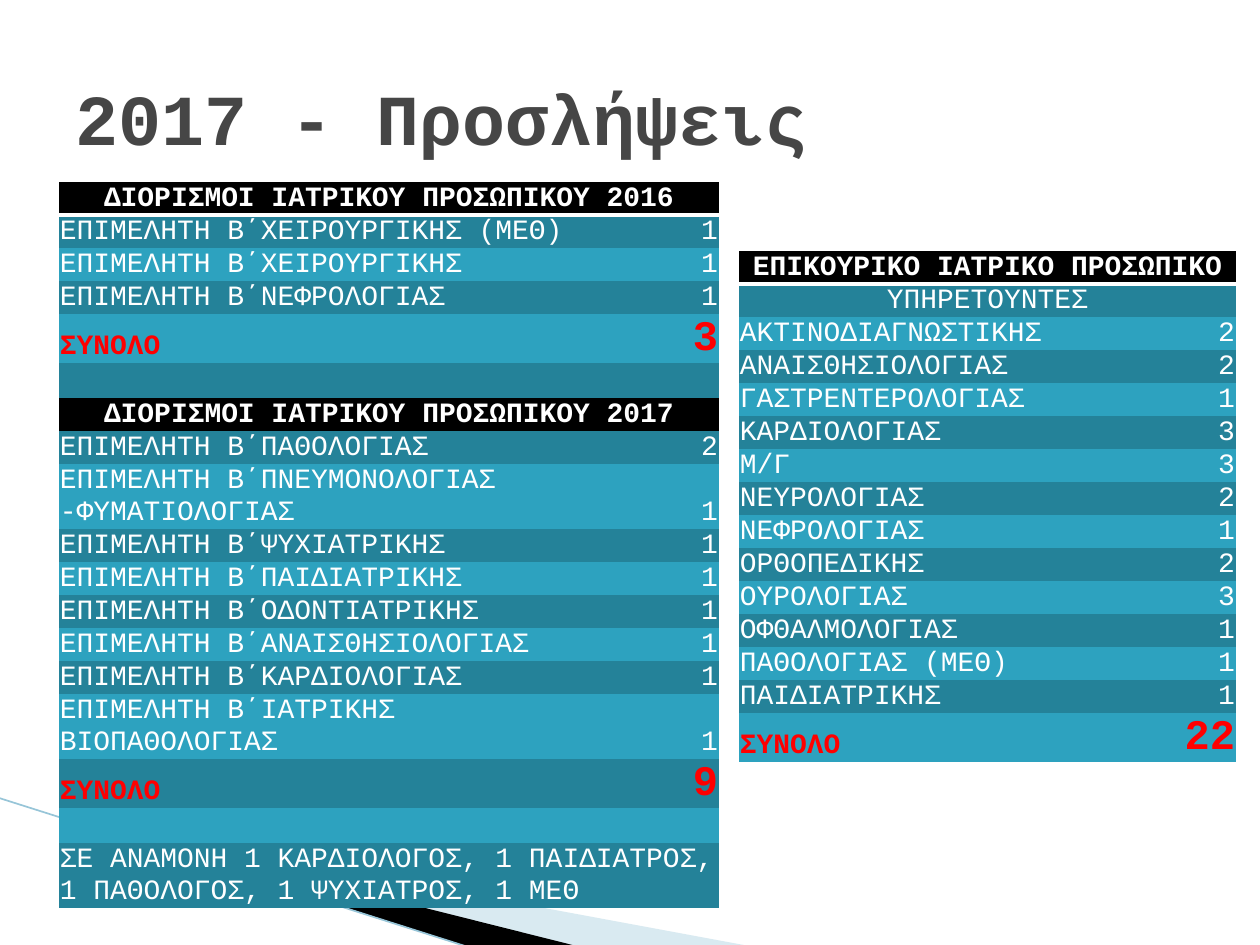
from dataclasses import dataclass

from lxml import etree
from pptx import Presentation
from pptx import util as u
from pptx.dml.color import RGBColor
from pptx.enum import shapes, text
from pptx.oxml import ns

SCALE = 914400 // 126  # EMU in one px


def px(length):
    return u.Emu(length * SCALE)


@dataclass(frozen=True)
class Theme:
    font: str = "Courier New"
    heading: str = "464646"
    white: str = "FFFFFF"
    black: str = "000000"
    total: str = "FF0000"
    dark_band: str = "248299"
    light_band: str = "2DA2BF"
    wedge: str = "A0CBDC"
    edge: str = "97C5D8"
    title_size: int = 41
    table_size: int = 16
    total_size: int = 24


# Row kinds: height in px, and whether both columns are joined
HEIGHTS = {"header": 33, "sub": 33, "item": 33, "wrapped": 65,
           "total": 49, "gap": 35, "blank": 35, "note": 65}
JOINED = {"header", "sub", "gap", "note"}
CENTRED = {"header", "sub"}


class Deck:
    def __init__(self, theme):
        self.theme = theme
        self.prs = Presentation()
        self.prs.slide_width, self.prs.slide_height = u.Inches(10), u.Inches(7.5)
        self.slide = self.prs.slides.add_slide(self.prs.slide_layouts[5])

    def style(self, font, color, size, bold):
        look = {"name": self.theme.font, "size": u.Pt(size), "bold": bold}
        for key, value in look.items():
            setattr(font, key, value)
        font.color.rgb = RGBColor.from_string(color)

    def title(self, words, left, top, width, height):
        heading = self.slide.shapes.title
        box = {"left": left, "top": top, "width": width, "height": height}
        for key, value in box.items():
            setattr(heading, key, px(value))
        frame = heading.text_frame
        frame.text = words
        layout = {"vertical_anchor": text.MSO_ANCHOR.MIDDLE, "word_wrap": True,
                  "auto_size": text.MSO_AUTO_SIZE.NONE}
        for key, value in layout.items():
            setattr(frame, key, value)
        line = frame.paragraphs[0]
        line.alignment = text.PP_ALIGN.LEFT
        self.style(line.runs[0].font, self.theme.heading, self.theme.title_size, True)

    def wedge(self, points, color, opacity=100):
        builder = self.slide.shapes.build_freeform(*points[0], scale=SCALE)
        builder.add_line_segments(points[1:], close=True)
        wedge = builder.convert_to_shape()
        wedge.shadow.inherit = False
        wedge.line.fill.background()
        wedge.fill.solid()
        wedge.fill.fore_color.rgb = RGBColor.from_string(color)
        if opacity < 100:
            tint = wedge.fill._xPr.find(".//" + ns.qn("a:srgbClr"))
            etree.SubElement(tint, ns.qn("a:alpha"), val=str(opacity * 1000))

    def line(self, start, end, color, weight):
        edge = self.slide.shapes.add_connector(
            shapes.MSO_CONNECTOR.STRAIGHT, *map(px, start + end))
        edge.line.color.rgb = RGBColor.from_string(color)
        edge.line.width = u.Pt(weight)
        etree.SubElement(edge._element.spPr, ns.qn("a:effectLst"))

    def underline(self, cell, color, weight):
        props = cell._tc.get_or_add_tcPr()
        border = etree.Element(ns.qn("a:lnB"), w=str(u.Pt(weight)))
        fill = etree.SubElement(border, ns.qn("a:solidFill"))
        etree.SubElement(fill, ns.qn("a:srgbClr"), val=color)
        props.insert(0, border)

    def cell(self, cell, words, kind, column, fill):
        theme = self.theme
        layout = {"vertical_anchor": text.MSO_ANCHOR.BOTTOM, "margin_left": px(1),
                  "margin_right": px(1), "margin_top": px(1), "margin_bottom": 0}
        for key, value in layout.items():
            setattr(cell, key, value)
        cell.fill.solid()
        cell.fill.fore_color.rgb = RGBColor.from_string(fill)
        line = cell.text_frame.paragraphs[0]
        if kind in CENTRED:
            line.alignment = text.PP_ALIGN.CENTER
        elif column == 1:
            line.alignment = text.PP_ALIGN.RIGHT
        is_total = kind == "total"
        size = theme.total_size if is_total and column == 1 else theme.table_size
        font = line.font
        if words:
            run = line.add_run()
            run.text = words
            font = run.font
        self.style(font, theme.total if is_total else theme.white, size,
                   is_total or kind == "header")

    def table(self, left, top, widths, rows):
        theme = self.theme
        heights = [HEIGHTS[kind] for kind, *_ in rows]
        grid = self.slide.shapes.add_table(
            len(rows), len(widths), px(left), px(top),
            px(sum(widths)), px(sum(heights))).table
        # Plain style without grid lines
        grid._tbl.tblPr.find(ns.qn("a:tableStyleId")).text = \
            "{2D5ABB26-0587-4C30-8999-92F81FD0307C}"
        for column, width in zip(grid.columns, widths):
            column.width = px(width)
        for index, (kind, *words) in enumerate(rows):
            grid.rows[index].height = px(heights[index])
            band = theme.dark_band if index % 2 else theme.light_band
            fill = theme.black if kind == "header" else band
            if kind in JOINED:
                grid.cell(index, 0).merge(grid.cell(index, 1))
            for column in range(len(widths)):
                value = words[column] if column < len(words) else ""
                self.cell(grid.cell(index, column), value, kind, column, fill)
                if index == 0:
                    self.underline(grid.cell(index, column), theme.white, 2)


APPOINTMENTS = [
    ("header", "ΔΙΟΡΙΣΜΟΙ ΙΑΤΡΙΚΟΥ ΠΡΟΣΩΠΙΚΟΥ 2016"),
    ("item", "ΕΠΙΜΕΛΗΤΗ Β΄ΧΕΙΡΟΥΡΓΙΚΗΣ (ΜΕΘ)", "1"),
    ("item", "ΕΠΙΜΕΛΗΤΗ Β΄ΧΕΙΡΟΥΡΓΙΚΗΣ", "1"),
    ("item", "ΕΠΙΜΕΛΗΤΗ Β΄ΝΕΦΡΟΛΟΓΙΑΣ", "1"),
    ("total", "ΣΥΝΟΛΟ", "3"),
    ("gap",),
    ("header", "ΔΙΟΡΙΣΜΟΙ ΙΑΤΡΙΚΟΥ ΠΡΟΣΩΠΙΚΟΥ 2017"),
    ("item", "ΕΠΙΜΕΛΗΤΗ Β΄ΠΑΘΟΛΟΓΙΑΣ", "2"),
    ("wrapped", "ΕΠΙΜΕΛΗΤΗ Β΄ΠΝΕΥΜΟΝΟΛΟΓΙΑΣ -ΦΥΜΑΤΙΟΛΟΓΙΑΣ", "1"),
    ("item", "ΕΠΙΜΕΛΗΤΗ Β΄ΨΥΧΙΑΤΡΙΚΗΣ", "1"),
    ("item", "ΕΠΙΜΕΛΗΤΗ Β΄ΠΑΙΔΙΑΤΡΙΚΗΣ", "1"),
    ("item", "ΕΠΙΜΕΛΗΤΗ Β΄ΟΔΟΝΤΙΑΤΡΙΚΗΣ", "1"),
    ("item", "ΕΠΙΜΕΛΗΤΗ Β΄ΑΝΑΙΣΘΗΣΙΟΛΟΓΙΑΣ", "1"),
    ("item", "ΕΠΙΜΕΛΗΤΗ Β΄ΚΑΡΔΙΟΛΟΓΙΑΣ", "1"),
    ("wrapped", "ΕΠΙΜΕΛΗΤΗ Β΄ΙΑΤΡΙΚΗΣ ΒΙΟΠΑΘΟΛΟΓΙΑΣ", "1"),
    ("total", "ΣΥΝΟΛΟ", "9"),
    ("blank",),
    ("note", "ΣΕ ΑΝΑΜΟΝΗ 1 ΚΑΡΔΙΟΛΟΓΟΣ, 1 ΠΑΙΔΙΑΤΡΟΣ, "
             "1 ΠΑΘΟΛΟΓΟΣ, 1 ΨΥΧΙΑΤΡΟΣ, 1 ΜΕΘ"),
]

AUXILIARY_STAFF = {
    "ΑΚΤΙΝΟΔΙΑΓΝΩΣΤΙΚΗΣ": 2, "ΑΝΑΙΣΘΗΣΙΟΛΟΓΙΑΣ": 2, "ΓΑΣΤΡΕΝΤΕΡΟΛΟΓΙΑΣ": 1,
    "ΚΑΡΔΙΟΛΟΓΙΑΣ": 3, "Μ/Γ": 3, "ΝΕΥΡΟΛΟΓΙΑΣ": 2, "ΝΕΦΡΟΛΟΓΙΑΣ": 1,
    "ΟΡΘΟΠΕΔΙΚΗΣ": 2, "ΟΥΡΟΛΟΓΙΑΣ": 3, "ΟΦΘΑΛΜΟΛΟΓΙΑΣ": 1,
    "ΠΑΘΟΛΟΓΙΑΣ (ΜΕΘ)": 1, "ΠΑΙΔΙΑΤΡΙΚΗΣ": 1,
}


def main():
    theme = Theme()
    deck = Deck(theme)

    # Corner decoration
    deck.wedge([(69, 820), (749, 946), (575, 946), (69, 819)], theme.wedge, 40)
    deck.wedge([(67, 818), (576, 946), (469, 947), (68, 819)], theme.black)
    deck.line((-1, 798), (468, 947), theme.edge, 0.95)

    # Auxiliary medical staff; the total is the sum of the specialties
    staff = [("item", name, str(count)) for name, count in AUXILIARY_STAFF.items()]
    deck.table(739, 251, (328, 169), [
        ("header", "ΕΠΙΚΟΥΡΙΚΟ ΙΑΤΡΙΚΟ ΠΡΟΣΩΠΙΚΟ"), ("sub", "ΥΠΗΡΕΤΟΥΝΤΕΣ"), *staff,
        ("total", "ΣΥΝΟΛΟ", str(sum(AUXILIARY_STAFF.values())))])

    # Heading and appointments by year
    deck.title("2017 - Προσλήψεις", 63, 38, 1134, 157)
    deck.table(59, 182, (514, 146), APPOINTMENTS)

    deck.prs.save("out.pptx")


if __name__ == "__main__":
    main()
